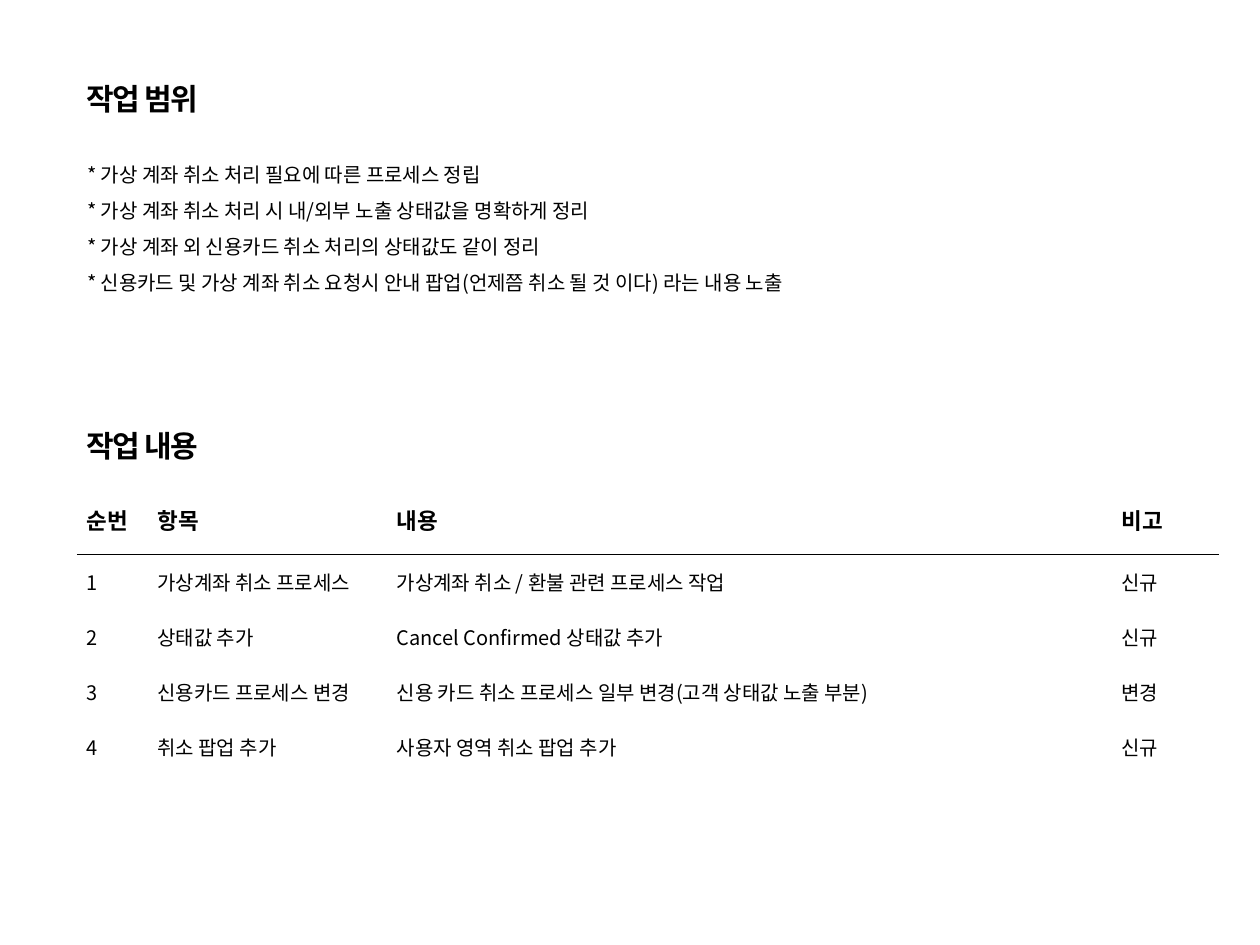
from dataclasses import dataclass

from lxml import etree
from pptx import Presentation
from pptx.dml.color import RGBColor
from pptx.enum.text import MSO_ANCHOR
from pptx.oxml.ns import qn
from pptx.util import Inches, Pt

TOP, MIDDLE = MSO_ANCHOR.TOP, MSO_ANCHOR.MIDDLE


@dataclass(frozen=True)
class Theme:
    face: str = "Noto Sans CJK KR"
    ink: str = "000000"
    paper: str = "FFFFFF"
    title: float = 24
    head: float = 18
    body: float = 16
    pitch: float = 28.8
    rule: float = 1


THEME = Theme()

SCOPE = [
    "* 가상 계좌 취소 처리 필요에 따른 프로세스 정립",
    "* 가상 계좌 취소 처리 시 내/외부 노출 상태값을 명확하게 정리",
    "* 가상 계좌 외 신용카드 취소 처리의 상태값도 같이 정리",
    "* 신용카드 및 가상 계좌 취소 요청시 안내 팝업(언제쯤 취소 될 것 이다) 라는 내용 노출",
]
TASKS = [
    ["순번", "항목", "내용", "비고"],
    ["1", "가상계좌 취소 프로세스", "가상계좌 취소 / 환불 관련 프로세스 작업", "신규"],
    ["2", "상태값 추가", "Cancel Confirmed 상태값 추가", "신규"],
    ["3", "신용카드 프로세스 변경",
     "신용 카드 취소 프로세스 일부 변경(고객 상태값 노출 부분)", "변경"],
    ["4", "취소 팝업 추가", "사용자 영역 취소 팝업 추가", "신규"],
]
COLS = [0.79, 2.66, 8.05, 1.18]
HEAD_ROW, TASK_ROW = 0.62, 0.61


def style(para, size, bold=False, track=0):
    """Set the font for Latin and Korean text; track is in points."""
    font = para.font
    font.size, font.bold, font.name = Pt(size), bold, THEME.face
    font.color.rgb = RGBColor.from_string(THEME.ink)
    props = para._p.pPr.find(qn("a:defRPr"))
    if track:
        props.set("spc", str(track * 100))
    latin = props.find(qn("a:latin"))
    latin.addnext(etree.Element(qn("a:ea"), typeface=THEME.face))


def add_text(slide, left, top, width, height, lines):
    """Add a middle-anchored box and return its paragraphs."""
    box = slide.shapes.add_textbox(
        Inches(left), Inches(top), Inches(width), Inches(height))
    frame = box.text_frame
    frame.word_wrap = True
    frame.vertical_anchor = MIDDLE
    frame.text = "\n".join(lines)
    return frame.paragraphs


def add_title(slide, top, text):
    for para in add_text(slide, 0.86, top, 1.6, 0.5, [text]):
        style(para, THEME.title, bold=True, track=-1)


def add_list(slide, lines):
    for para in add_text(slide, 0.87, 1.64, 9.36, 1.66, lines):
        para.line_spacing = Pt(THEME.pitch)
        style(para, THEME.body)


def add_rule(cell, side):
    """Draw one border of a cell; side is lnT or lnB."""
    line = etree.Element(qn(f"a:{side}"), w=str(Pt(THEME.rule)))
    fill = etree.SubElement(line, qn("a:solidFill"))
    etree.SubElement(fill, qn("a:srgbClr"), val=THEME.ink)
    cell._tc.get_or_add_tcPr().insert(0, line)


def fill_cell(cell, text, row):
    cell.text = text
    cell.fill.solid()
    cell.fill.fore_color.rgb = RGBColor.from_string(THEME.paper)
    head = row == 0
    cell.vertical_anchor = TOP if head else MIDDLE
    style(cell.text_frame.paragraphs[0],
          THEME.head if head else THEME.body, bold=head)
    if row < 2:
        add_rule(cell, "lnB" if head else "lnT")


def add_tasks(slide, rows):
    heights = [HEAD_ROW] + [TASK_ROW] * (len(rows) - 1)
    table = slide.shapes.add_table(
        len(rows), len(COLS), Inches(0.86), Inches(5.54),
        Inches(sum(COLS)), Inches(sum(heights))).table
    table.first_row = table.horz_banding = False
    for col, width in zip(table.columns, COLS):
        col.width = Inches(width)
    for row, height in zip(table.rows, heights):
        row.height = Inches(height)
    for r, texts in enumerate(rows):
        for c, text in enumerate(texts):
            fill_cell(table.cell(r, c), text, r)


def main():
    deck = Presentation()
    deck.slide_width, deck.slide_height = Inches(14), Inches(10.5)
    slide = deck.slides.add_slide(deck.slide_layouts[6])
    add_title(slide, 4.7, "작업 내용")
    add_tasks(slide, TASKS)
    add_title(slide, 0.84, "작업 범위")
    add_list(slide, SCOPE)
    deck.save("out.pptx")


if __name__ == "__main__":
    main()
